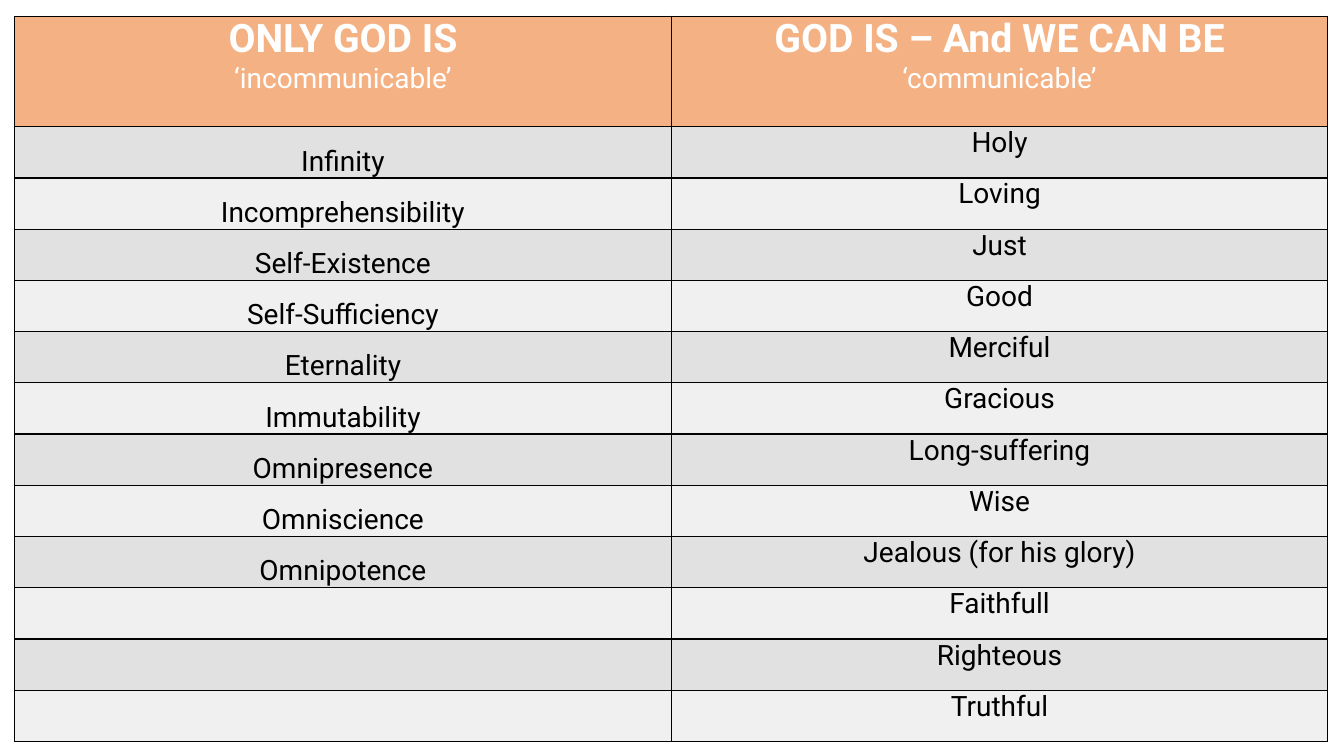
import itertools

import pptx
import pptx.dml.color
import pptx.enum.text
import pptx.oxml
import pptx.oxml.ns
import pptx.util

Pt = pptx.util.Pt
Anchor = pptx.enum.text.MSO_ANCHOR

# Content
HEADINGS = [
    ("ONLY GOD IS", "‘incommunicable’"),
    ("GOD IS – And WE CAN BE", "‘communicable’"),
]
ONLY_GOD = [
    "Infinity", "Incomprehensibility", "Self-Existence", "Self-Sufficiency",
    "Eternality", "Immutability", "Omnipresence", "Omniscience", "Omnipotence",
]
SHARED = [
    "Holy", "Loving", "Just", "Good", "Merciful", "Gracious", "Long-suffering",
    "Wise", "Jealous (for his glory)", "Faithfull", "Righteous", "Truthful",
]

# Format, lengths in points
FONT = "Roboto"
HEADING_FILL = "F4B183"
BAND_FILLS = ["E1E1E1", "F0F0F0"]
LEFT, TOP, WIDTH = 10.5, 11.5, 938
HEADING_HEIGHT, ROW_HEIGHT = 79, 36.6
SIDE_MARGIN = 5


def color(hex_string):
    return pptx.dml.color.RGBColor.from_string(hex_string)


def write(paragraph, text, size=20, bold=False, ink="000000"):
    paragraph.alignment = pptx.enum.text.PP_ALIGN.CENTER
    if text:
        paragraph.add_run().text = text
    font = paragraph.font
    if paragraph.runs:
        font = paragraph.runs[0].font
    font.name, font.size, font.bold = FONT, Pt(size), bold
    font.color.rgb = color(ink)


def format_cell(cell, fill, anchor=Anchor.TOP):
    cell.margin_left = cell.margin_right = Pt(SIDE_MARGIN)
    cell.margin_top = cell.margin_bottom = 0
    cell.vertical_anchor = anchor
    # Borders come before the fill in the cell properties
    for side in ("lnL", "lnR", "lnT", "lnB"):
        cell._tc.get_or_add_tcPr().append(pptx.oxml.parse_xml(
            f'<a:{side} {pptx.oxml.ns.nsdecls("a")} w="{Pt(1)}">'
            '<a:solidFill><a:srgbClr val="000000"/></a:solidFill>'
            f'</a:{side}>'))
    cell.fill.solid()
    cell.fill.fore_color.rgb = color(fill)


def main():
    prs = pptx.Presentation()
    prs.slide_width, prs.slide_height = Pt(960), Pt(540)
    slide = prs.slides.add_slide(prs.slide_layouts[6])

    # Table grid
    attributes = list(itertools.zip_longest(ONLY_GOD, SHARED, fillvalue=""))
    height = HEADING_HEIGHT + ROW_HEIGHT * len(attributes)
    table = slide.shapes.add_table(
        len(attributes) + 1, len(HEADINGS),
        Pt(LEFT), Pt(TOP), Pt(WIDTH), Pt(height)).table
    for column in table.columns:
        column.width = Pt(WIDTH / len(HEADINGS))
    for index, row in enumerate(table.rows):
        row.height = Pt(ROW_HEIGHT if index else HEADING_HEIGHT)

    # Heading row
    for col, (heading, subheading) in enumerate(HEADINGS):
        cell = table.cell(0, col)
        format_cell(cell, HEADING_FILL)
        frame = cell.text_frame
        write(frame.paragraphs[0], heading, size=28, bold=True, ink="FFFFFF")
        write(frame.add_paragraph(), subheading, ink="FFFFFF")

    # Attribute rows: left column sits low, right column sits high
    for index, pair in enumerate(attributes):
        for col, (text, anchor) in enumerate(zip(pair, (Anchor.BOTTOM, Anchor.TOP))):
            cell = table.cell(index + 1, col)
            format_cell(cell, BAND_FILLS[index % 2], anchor)
            write(cell.text_frame.paragraphs[0], text)

    prs.save("out.pptx")


if __name__ == "__main__":
    main()
